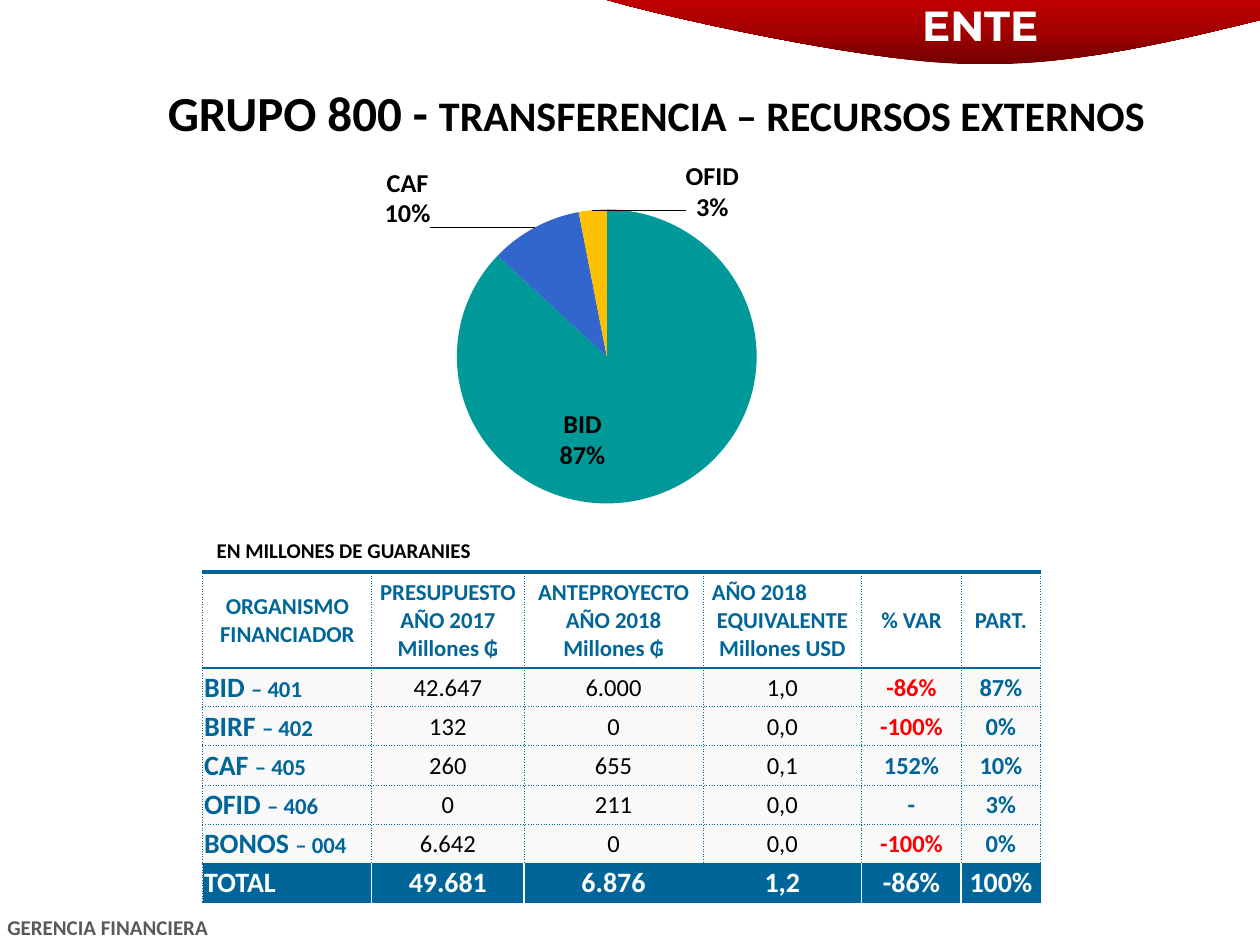
from dataclasses import dataclass

from lxml.etree import SubElement
from pptx import Presentation
from pptx.chart.data import CategoryChartData
from pptx.dml.color import RGBColor
from pptx.enum.chart import XL_CHART_TYPE, XL_LABEL_POSITION
from pptx.enum.text import MSO_ANCHOR, PP_ALIGN
from pptx.oxml import parse_xml
from pptx.oxml.ns import nsdecls, qn
from pptx.util import Inches, Pt


@dataclass(frozen=True)
class Theme:
    font: str = "Calibri"
    banner_font: str = "Montserrat"
    blue: str = "006699"
    black: str = "000000"
    white: str = "FFFFFF"
    red: str = "FF0000"
    gray: str = "595959"
    row: str = "F9F9F9"
    banner: tuple = ((0, "720000"), (50, "A20000"), (100, "C00000"))
    slices: tuple = ("009999", "B2B2B2", "3366CC", "FFC000", "5F5F5F")
    title: int = 28
    subtitle: int = 24
    label: int = 15
    small: int = 12
    head: int = 13
    body: int = 14
    strong: int = 16


T = Theme()


def style(font, **fmt):
    """Apply format values to a font."""
    values = dict(name=T.font, bold=True) | fmt
    font.color.rgb = RGBColor.from_string(values.pop("color", T.black))
    for key, value in values.items():
        setattr(font, key, value)


def bezier(p0, p1, p2, p3, steps=24):
    """Points along a cubic curve, start point left out."""
    for i in range(1, steps + 1):
        t = i / steps
        u = 1 - t
        yield tuple(u**3 * a + 3 * u * u * t * b + 3 * u * t * t * c + t**3 * d
                    for a, b, c, d in zip(p0, p1, p2, p3))


class SlideBuilder:
    def __init__(self, prs):
        self.s = prs.slides.add_slide(prs.slide_layouts[6])

    def add_runs(self, p, runs, align=PP_ALIGN.LEFT):
        p.alignment = align
        for text, fmt in runs:
            r = p.add_run()
            r.text = text
            style(r.font, **fmt)

    def text(self, box, runs, align=PP_ALIGN.LEFT, anchor=MSO_ANCHOR.TOP):
        tf = self.s.shapes.add_textbox(*map(Inches, box)).text_frame
        tf.word_wrap = True
        tf.vertical_anchor = anchor
        self.add_runs(tf.paragraphs[0], runs, align)

    def banner(self, start, curves, corner):
        points, last = [], start
        for curve in curves:
            points += bezier(last, *curve)
            last = curve[-1]
        fb = self.s.shapes.build_freeform(*map(Inches, start), scale=1.0)
        fb.add_line_segments([(Inches(x), Inches(y)) for x, y in points + [corner]])
        sp = fb.convert_to_shape()
        sp.shadow.inherit = False
        sp.line.fill.background()
        stops = "".join(f'<a:gs pos="{pos * 1000}"><a:srgbClr val="{color}"/></a:gs>'
                        for pos, color in T.banner)
        sp._element.spPr.find(qn("a:custGeom")).addnext(parse_xml(
            f'<a:gradFill {nsdecls("a")}><a:gsLst>{stops}</a:gsLst>'
            '<a:lin ang="16200000" scaled="0"/></a:gradFill>'))

    def pie(self, box, values, offsets, plot):
        data = CategoryChartData(number_format="0%")
        data.categories = list(values)
        data.add_series("Series 1", list(values.values()))
        chart = self.s.shapes.add_chart(XL_CHART_TYPE.PIE, *map(Inches, box), data).chart
        chart.has_legend = chart.has_title = False
        style(chart.font, size=Pt(T.label))
        pie = chart.plots[0]
        pie.vary_by_categories = True
        for i, color in enumerate(T.slices):
            fill = pie.series[0].points[i].format.fill
            fill.solid()
            fill.fore_color.rgb = RGBColor.from_string(color)

        # Data labels, with their shift from the usual place
        labels = pie.series[0].data_labels
        style(labels.font, size=Pt(T.label))
        flags = dict(show_value=True, show_category_name=True, show_percentage=False,
                     number_format="0%", number_format_is_linked=False)
        for key, value in flags.items():
            setattr(labels, key, value)
        xml = labels._element
        for i, name in enumerate(values):
            if name not in offsets:
                content = '<c:delete val="1"/>'
            else:
                x, y, place = offsets[name]
                content = (
                    f'<c:layout><c:manualLayout><c:x val="{x}"/><c:y val="{y}"/>'
                    f'</c:manualLayout></c:layout><c:dLblPos val="{place}"/>'
                    '<c:showLegendKey val="0"/><c:showVal val="1"/>'
                    '<c:showCatName val="1"/><c:showSerName val="0"/>'
                    '<c:showPercent val="0"/><c:showBubbleSize val="0"/>'
                    '<c:separator>\n</c:separator>')
            xml.insert(i, parse_xml(
                f'<c:dLbl {nsdecls("c")}><c:idx val="{i}"/>{content}</c:dLbl>'))
        labels.position = XL_LABEL_POSITION.OUTSIDE_END
        for old in xml.findall(qn("c:showLeaderLines")):
            xml.remove(old)
        SubElement(xml, qn("c:separator")).text = "\n"
        SubElement(xml, qn("c:showLeaderLines")).set("val", "1")

        # Plot area
        area = chart._chartSpace.chart.plotArea
        for old in area.findall(qn("c:layout")):
            area.remove(old)
        sizes = "".join(f'<c:{k} val="{v}"/>' for k, v in zip("xywh", plot))
        area.insert(0, parse_xml(
            f'<c:layout {nsdecls("c")}><c:manualLayout><c:layoutTarget val="inner"/>'
            f'<c:xMode val="edge"/><c:yMode val="edge"/>{sizes}'
            '</c:manualLayout></c:layout>'))

    def borders(self, cell, **sides):
        for side in "LRTB":
            color, width, dash = sides.get(side, (T.blue, 0.5, "sysDot"))
            cell._tc.get_or_add_tcPr().append(parse_xml(
                f'<a:ln{side} {nsdecls("a")} w="{int(Pt(width))}"><a:solidFill>'
                f'<a:srgbClr val="{color}"/></a:solidFill>'
                f'<a:prstDash val="{dash}"/></a:ln{side}>'))

    def cell(self, cell, paragraphs, align, fill=None, **sides):
        margins = dict(margin_left=0.01, margin_top=0.01, margin_right=0.01, margin_bottom=0)
        for key, value in margins.items():
            setattr(cell, key, Inches(value))
        cell.vertical_anchor = MSO_ANCHOR.MIDDLE
        self.borders(cell, **sides)
        if fill:
            cell.fill.solid()
            cell.fill.fore_color.rgb = RGBColor.from_string(fill)
        else:
            cell.fill.background()
        tf = cell.text_frame
        for i, runs in enumerate(paragraphs):
            self.add_runs(tf.add_paragraph() if i else tf.paragraphs[0], runs, align)

    def table(self, box, widths, heights, head, rows, total):
        tbl = self.s.shapes.add_table(len(heights), len(widths), *map(Inches, box)).table
        tbl.first_row = tbl.horz_banding = False
        for items, sizes, key in ((tbl.columns, widths, "width"), (tbl.rows, heights, "height")):
            for item, size in zip(items, sizes):
                setattr(item, key, Inches(size))
        rule, white = (T.blue, 1, "solid"), (T.white, 1, "solid")
        head_fmt = dict(size=Pt(T.head), color=T.blue)
        for c, text in enumerate(head):
            self.cell(tbl.cell(0, c), [[(line, head_fmt)] for line in text.split("\n")],
                      PP_ALIGN.CENTER, T=(T.blue, 2.25, "solid"), B=rule)
        for r, row in enumerate(rows, 1):
            for c, text in enumerate(row):
                align = PP_ALIGN.CENTER if c else PP_ALIGN.LEFT
                if c == 0:
                    name, code = text.split(" ", 1)
                    runs = [(name + " ", dict(size=Pt(T.strong), color=T.blue)), (code, head_fmt)]
                else:
                    negative = text.startswith("-") and text != "-"
                    color = T.black if c < 4 else T.red if negative else T.blue
                    runs = [(text, dict(size=Pt(T.body), color=color, bold=c >= 4))]
                self.cell(tbl.cell(r, c), [runs], align, T.row, **({"T": rule} if r == 1 else {}))
        white_edges = {1, 2, 4, 5}
        for c, text in enumerate(total):
            sides = {side: white for side, edge in (("L", c), ("R", c + 1)) if edge in white_edges}
            self.cell(tbl.cell(len(rows) + 1, c),
                      [[(text, dict(size=Pt(T.strong), color=T.white))]],
                      PP_ALIGN.CENTER if c else PP_ALIGN.LEFT, T.blue, B=rule, **sides)
        return tbl


def main():
    prs = Presentation()
    prs.slide_width, prs.slide_height = Inches(10), Inches(7.5)
    b = SlideBuilder(prs)

    # Banner and footer
    b.banner((4.79, -0.01),
             [((5.09, 0.09), (6.82, 0.49), (7.69, 0.51)),
              ((8.56, 0.54), (9.61, 0.25), (10, 0.16))], (10, 0))
    b.text((7.13, -0.05, 1.3, 0.5),
           [("ENTE", dict(name=T.banner_font, size=Pt(T.subtitle), color=T.white))],
           PP_ALIGN.CENTER)
    b.text((-0.04, 7.21, 3.46, 0.3),
           [("GERENCIA FINANCIERA", dict(size=Pt(T.small), color=T.gray))])

    # Title
    b.text((0.42, 0.68, 9.58, 0.49),
           [("GRUPO 800 - ", dict(size=Pt(T.title))),
            ("TRANSFERENCIA – RECURSOS EXTERNOS", dict(size=Pt(T.subtitle)))],
           PP_ALIGN.CENTER, MSO_ANCHOR.BOTTOM)

    # Share of each lender
    b.pie((1.93, 1.12, 6.14, 3.26),
          {"BID": 0.87, "BIRF": 0, "CAF": 0.1, "OFID": 0.03, "BONOS": 0},
          {"BID": (-0.07, 0.04, "ctr"), "CAF": (-0.13, 0.02, "outEnd"),
           "OFID": (0.19, 0.05, "outEnd")},
          (0.02, 0.15, 0.9, 0.73))

    # Budget table
    b.text((1.62, 4.22, 2.31, 0.3), [("EN MILLONES DE GUARANIES", dict(size=Pt(T.small)))])
    tbl = b.table(
        (1.61, 4.54, 6.65, 2.6), (1.34, 1.21, 1.42, 1.26, 0.79, 0.63), [0.76] + [0.31] * 6,
        ("ORGANISMO\nFINANCIADOR", "PRESUPUESTO\nAÑO 2017\nMillones ₲",
         "ANTEPROYECTO\nAÑO 2018\nMillones ₲", "AÑO 2018\nEQUIVALENTE\nMillones USD",
         "% VAR", "PART."),
        (("BID – 401", "42.647", "6.000", "1,0", "-86%", "87%"),
         ("BIRF – 402", "132", "0", "0,0", "-100%", "0%"),
         ("CAF – 405", "260", "655", "0,1", "152%", "10%"),
         ("OFID – 406", "0", "211", "0,0", "-", "3%"),
         ("BONOS – 004", "6.642", "0", "0,0", "-100%", "0%")),
        ("TOTAL", "49.681", "6.876", "1,2", "-86%", "100%"))
    year = tbl.cell(0, 3).text_frame.paragraphs[0]
    year.alignment = PP_ALIGN.LEFT
    year._p.get_or_add_pPr().set("marL", str(Inches(0.06)))

    prs.save("out.pptx")


if __name__ == "__main__":
    main()
